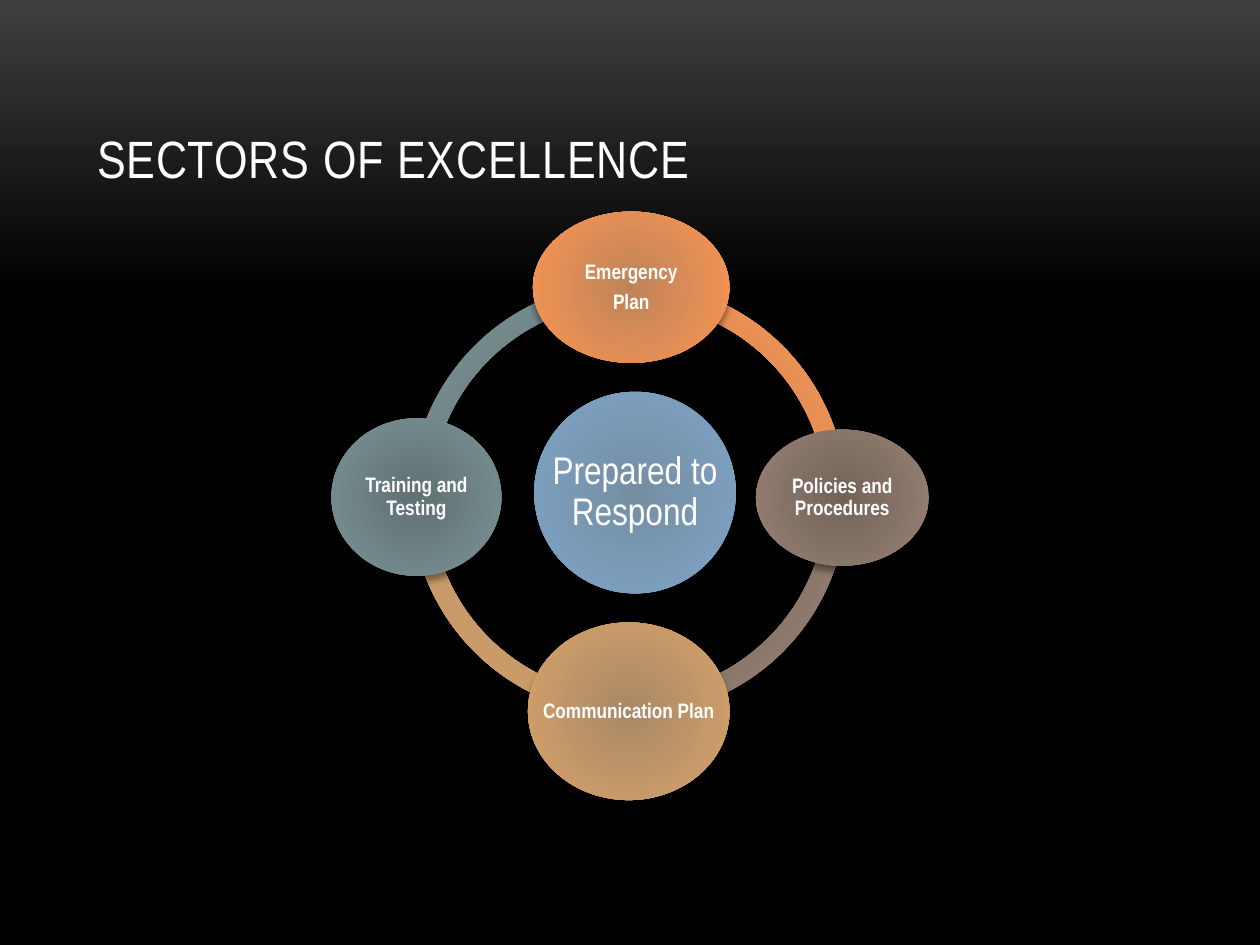
from dataclasses import dataclass

from lxml import etree
from pptx import Presentation
from pptx import util as u
from pptx.dml.color import RGBColor
from pptx.enum import shapes, text
from pptx.oxml.ns import nsdecls, qn
from pptx.oxml import parse_xml

FONT = "Arial Narrow"
WHITE = "FFFFFF"
ORANGE = ("BE8459", "FC9553")
BROWN = ("726359", "988274")
TAN = ("A88966", "D9A36A")
TEAL = ("607073", "7B9397")
BLUE = ("758DA1", "7FA6CA")

RADIAL = ('<a:path {} path="circle">'
          '<a:fillToRect l="100000" t="100000" r="100000" b="100000"/></a:path>')
DOWNWARD = '<a:lin {} ang="5400000" scaled="0"/>'
SHADOW = ('<a:outerShdw {} blurRad="50800" dist="43000" dir="5400000" rotWithShape="0">'
          '<a:srgbClr val="000000"><a:alpha val="40000"/></a:srgbClr></a:outerShdw>')


@dataclass
class Arc:
    top: float
    start: float
    end: float
    colors: tuple[str, str]


@dataclass
class Disc:
    left: float
    top: float
    width: float
    height: float
    colors: tuple[str, str]
    lines: tuple[str, ...]
    size: int = 12
    bold: bool = True
    inset: float = 0.02


# Arc angles are in units of 100000 / 60000 degrees, as the shape stores them.
ARCS = [
    Arc(2.24, 108.42, 162.42, TEAL),
    Arc(2.22, 54, 108, TAN),
    Arc(2.22, 0, 54, BROWN),
    Arc(2.24, 162.42, 215.58, ORANGE),
]
DISCS = [
    Disc(4.24, 3.11, 1.6, 1.6, BLUE, ("Prepared to Respond",), 22, False, 0.03),
    Disc(4.23, 1.68, 1.56, 1.2, ORANGE, ("Emergency", "Plan")),
    Disc(6, 3.41, 1.37, 1.08, BROWN, ("Policies and Procedures",)),
    Disc(4.19, 4.94, 1.6, 1.41, TAN, ("Communication Plan",)),
    Disc(2.63, 3.32, 1.35, 1.25, TEAL, ("Training and Testing",)),
]


def color(value: str) -> RGBColor:
    return RGBColor.from_string(value)


def set_gradient(fill, stops: list[tuple[int, str]], direction: str) -> None:
    """Fill with stops given as (percent, colour)."""
    fill.gradient()
    gradient = fill._fill._gradFill
    for child in list(gradient):
        gradient.remove(child)
    stop_list = etree.SubElement(gradient, qn("a:gsLst"))
    for percent, value in stops:
        stop = etree.SubElement(stop_list, qn("a:gs"), pos=str(percent * 1000))
        etree.SubElement(stop, qn("a:srgbClr"), val=value)
    gradient.append(parse_xml(direction.format(nsdecls("a"))))


def write(frame, lines, *, size, bold=False, anchor=text.MSO_ANCHOR.MIDDLE,
          align=text.PP_ALIGN.CENTER, line_spacing=None, space_after=0, tracking=0) -> None:
    frame.word_wrap = True
    frame.vertical_anchor = anchor
    for index, line in enumerate(lines):
        para = frame.paragraphs[0] if index == 0 else frame.add_paragraph()
        para.alignment = align
        para.line_spacing = line_spacing
        para.space_after = u.Pt(space_after)
        span = para.add_run()
        span.text = line
        span.font.name = FONT
        span.font.size = u.Pt(size)
        span.font.bold = bold
        span.font.color.rgb = color(WHITE)
        if tracking:
            span.font._element.set("spc", str(int(tracking * 100)))


def add_glossy(group, kind, left, top, width, height, colors: tuple[str, str]):
    """Add a shape with a radial gradient and a soft shadow below it."""
    shape = group.shapes.add_shape(
        kind, u.Inches(left), u.Inches(top), u.Inches(width), u.Inches(height))
    set_gradient(shape.fill, [(0, colors[0]), (100, colors[1])], RADIAL)
    shape.line.fill.background()
    shape.shadow.inherit = False
    effects = shape._element.spPr.find(qn("a:effectLst"))
    effects.append(parse_xml(SHADOW.format(nsdecls("a"))))
    return shape


def add_arc(group, arc: Arc) -> None:
    shape = add_glossy(group, shapes.MSO_SHAPE.BLOCK_ARC, 3.26, arc.top, 3.46, 3.46, arc.colors)
    for index, value in enumerate((arc.start, arc.end, 0.046)):
        shape.adjustments[index] = value


def add_disc(group, disc: Disc) -> None:
    """Add an ellipse and a label that may use its full width."""
    shape = add_glossy(group, shapes.MSO_SHAPE.OVAL, disc.left, disc.top,
                       disc.width, disc.height, disc.colors)
    box = group.shapes.add_textbox(shape.left, shape.top, shape.width, shape.height)
    frame = box.text_frame
    frame.margin_left = frame.margin_right = u.Inches(disc.inset)
    frame.margin_top = frame.margin_bottom = u.Inches(disc.inset)
    write(frame, disc.lines, size=disc.size, bold=disc.bold,
          line_spacing=0.9, space_after=0.35 * disc.size)


def main() -> None:
    deck = Presentation()
    deck.slide_width, deck.slide_height = u.Inches(10), u.Inches(7.5)
    slide = deck.slides.add_slide(deck.slide_layouts[5])
    set_gradient(slide.background.fill,
                 [(0, "3F3F3F"), (31, "000000"), (100, "000000")], DOWNWARD)

    title = slide.shapes.title
    title.left, title.top = u.Inches(0.67), u.Inches(0.3)
    title.width, title.height = u.Inches(8.67), u.Inches(1.25)
    write(title.text_frame, ["SECTORS OF EXCELLENCE"], size=30, tracking=0.5,
          anchor=text.MSO_ANCHOR.BOTTOM, align=text.PP_ALIGN.LEFT)

    cycle = slide.shapes.add_group_shape()
    for arc in ARCS:
        add_arc(cycle, arc)
    for disc in DISCS:
        add_disc(cycle, disc)
    deck.save("out.pptx")


if __name__ == "__main__":
    main()
